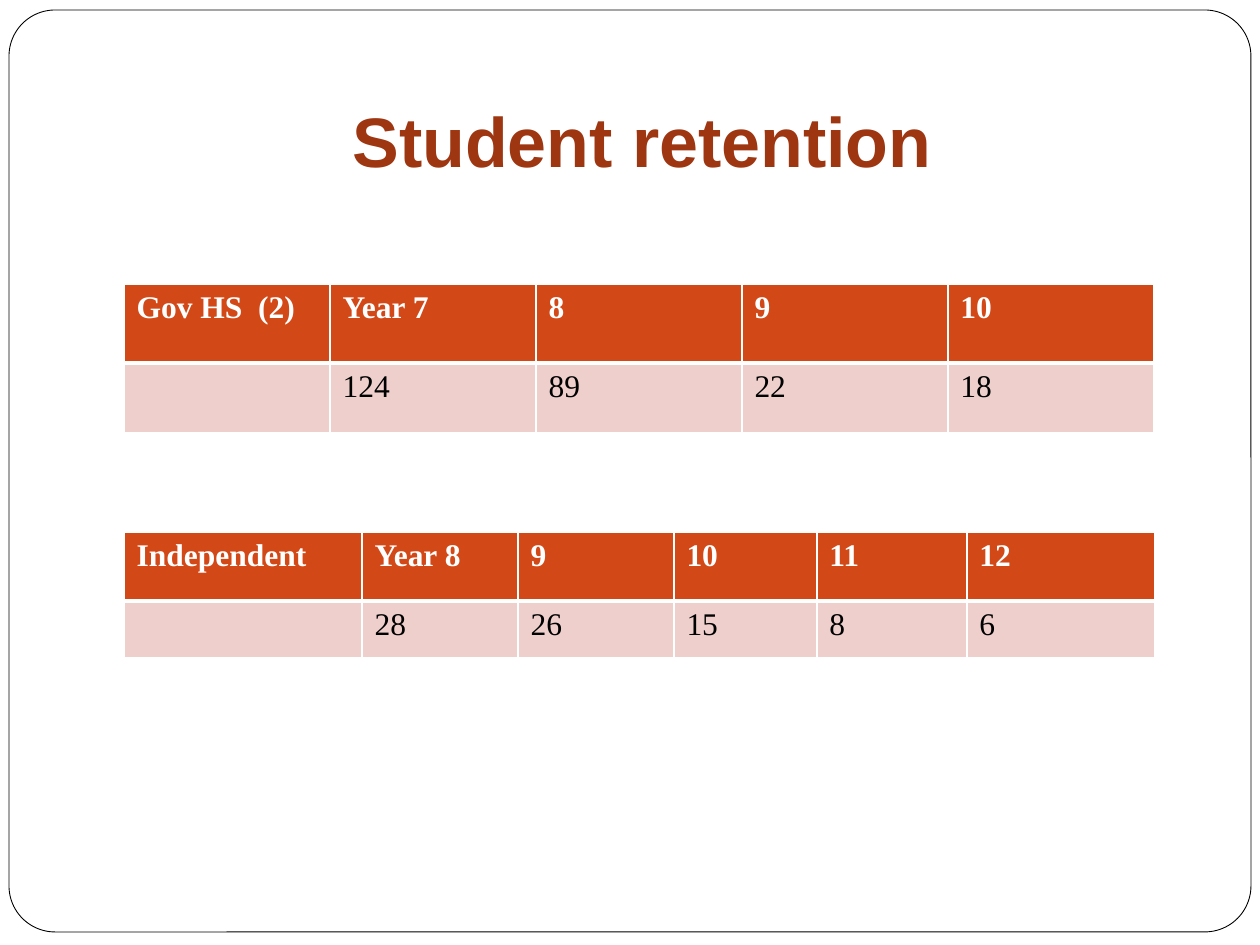
from lxml import etree
from pptx import Presentation
from pptx import util as u
from pptx.dml.color import RGBColor
from pptx.enum import shapes, text
from pptx.oxml import ns

PX = 914400 / 126
WHITE = RGBColor(0xFF, 0xFF, 0xFF)
BLACK = RGBColor(0, 0, 0)
RUST = RGBColor(0x9E, 0x36, 0x11)
ORANGE = RGBColor(0xD3, 0x48, 0x17)
PINK = RGBColor(0xEF, 0xCF, 0xCC)


def px(*lengths):
    return [u.Emu(round(length * PX)) for length in lengths]


def add_border(cell, side, points):
    properties = cell._tc.get_or_add_tcPr()
    line = etree.SubElement(properties, ns.qn(f"a:{side}"), w=str(u.Pt(points)))
    fill = etree.SubElement(line, ns.qn("a:solidFill"))
    etree.SubElement(fill, ns.qn("a:srgbClr"), val=str(WHITE))


prs = Presentation()
prs.slide_width, prs.slide_height = px(1260, 945)
slide = prs.slides.add_slide(prs.slide_layouts[5])

title = slide.shapes.title
title.left, title.top, title.width, title.height = px(126, 38, 1071, 157)
heading = title.text_frame
heading.text = "Student retention"
heading.word_wrap = True
heading.auto_size = text.MSO_AUTO_SIZE.NONE
heading.vertical_anchor = text.MSO_ANCHOR.BOTTOM
heading.margin_left, heading.margin_top, heading.margin_right, heading.margin_bottom = px(13, 6, 52, 13)
heading.paragraphs[0].alignment = text.PP_ALIGN.CENTER
heading_font = heading.paragraphs[0].runs[0].font
heading_font.name = "Arial"
heading_font.size = u.Pt(40)
heading_font.bold = True
heading_font.color.rgb = RUST

frame = slide.shapes.add_shape(shapes.MSO_SHAPE.ROUNDED_RECTANGLE, *px(9, 10, 1242, 922))
frame.adjustments[0] = 0.05
frame.shadow.inherit = False
frame.fill.solid()
frame.fill.fore_color.rgb = WHITE
frame.line.color.rgb = BLACK
frame.line.width = u.Pt(0.5)
title.element.addprevious(frame.element)

schools = [
    (284, [206] * 5, [79, 70],
     [["Gov HS  (2)", "Year 7", "8", "9", "10"],
      ["", "124", "89", "22", "18"]]),
    (532, [238, 156, 156, 143, 150, 188], [69, 57],
     [["Independent", "Year 8", "9", "10", "11", "12"],
      ["", "28", "26", "15", "8", "6"]]),
]

for top, widths, heights, values in schools:
    retention = slide.shapes.add_table(
        len(heights), len(widths), *px(124, top, sum(widths), sum(heights))).table
    for column, width in zip(retention.columns, px(*widths)):
        column.width = width
    for row, height in zip(retention.rows, px(*heights)):
        row.height = height
    for r, row_values in enumerate(values):
        is_header = r == 0
        for c, value in enumerate(row_values):
            cell = retention.cell(r, c)
            add_border(cell, "lnL", 1)
            add_border(cell, "lnR", 1)
            add_border(cell, "lnT", 1 if is_header else 3)
            add_border(cell, "lnB", 3 if is_header else 1)
            cell.fill.solid()
            cell.fill.fore_color.rgb = ORANGE if is_header else PINK
            cell.text_frame.text = value
            for run in cell.text_frame.paragraphs[0].runs:
                run.font.name = "Times New Roman"
                run.font.size = u.Pt(18)
                run.font.bold = is_header
                run.font.color.rgb = WHITE if is_header else BLACK

prs.save("out.pptx")
